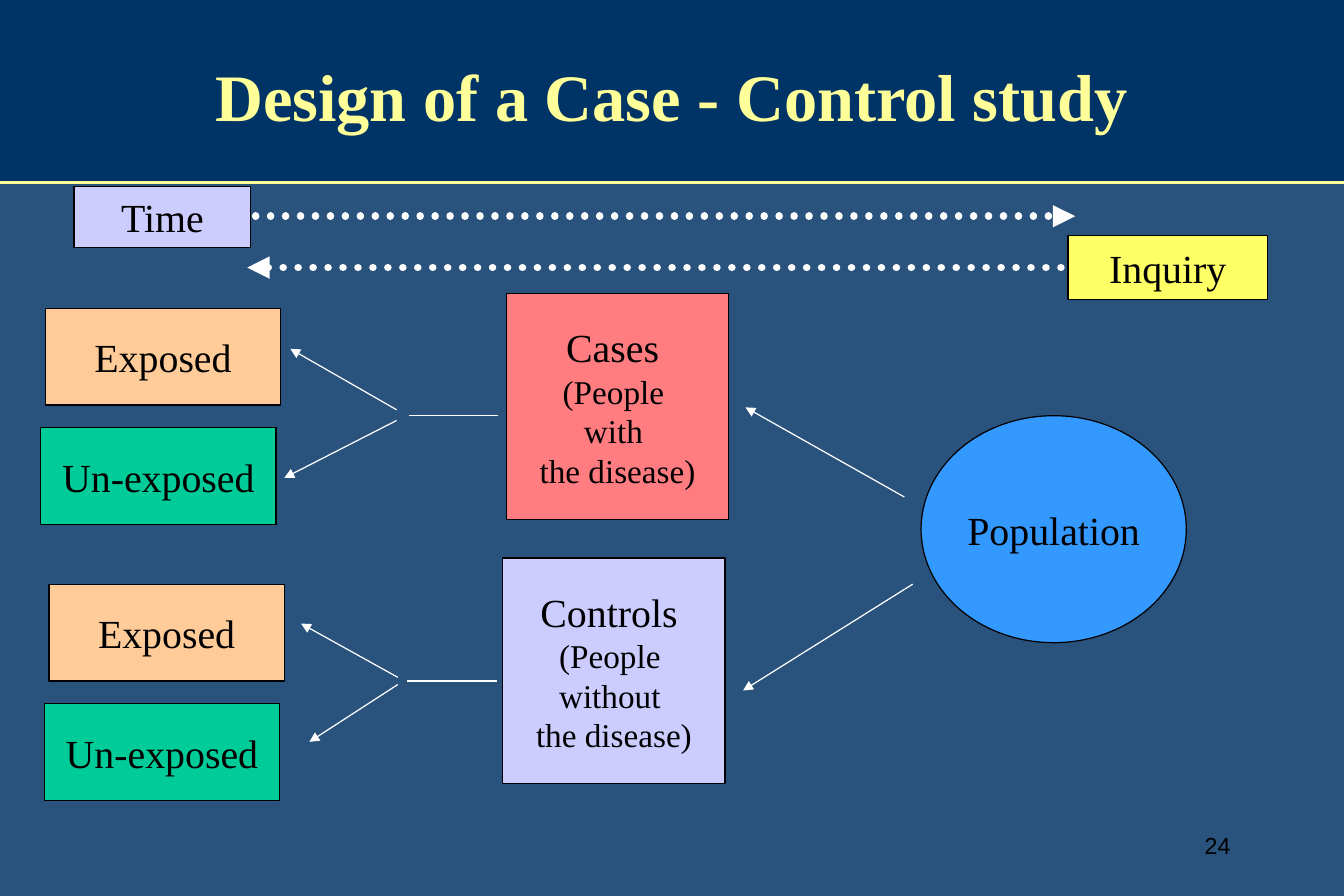
from lxml import etree
from pptx import Presentation
from pptx import util as u
from pptx.dml import color
from pptx.enum import dml, shapes, text
from pptx.oxml import ns

COLORS = {
    "background": "29537D", "band": "003366", "title": "FFFF99",
    "black": "000000", "white": "FFFFFF", "population": "3399FF",
    "cases": "FF7C80", "lavender": "CCCCFF", "exposed": "FFCC99",
    "unexposed": "00CC99", "inquiry": "FFFF66",
}
RGB = {name: color.RGBColor.from_string(value) for name, value in COLORS.items()}

presentation = Presentation()
presentation.slide_width = u.Inches(11.25)
presentation.slide_height = u.Inches(7.5)
COLUMN = presentation.slide_width / 45
ROW = presentation.slide_height / 30


def write(shape, content, sizes=(24,), font="Times New Roman", fill="black",
          bold=False, align=text.PP_ALIGN.CENTER, spacing=None, wrap=False):
    frame = shape.text_frame
    frame.text = content
    frame.word_wrap = wrap
    frame.auto_size = text.MSO_AUTO_SIZE.NONE
    frame.vertical_anchor = text.MSO_ANCHOR.MIDDLE
    for index, paragraph in enumerate(frame.paragraphs):
        paragraph.alignment = align
        paragraph.line_spacing = spacing
        for run in paragraph.runs:
            run.font.name = font
            run.font.size = u.Pt(sizes[min(index, len(sizes) - 1)])
            run.font.bold = bold
            run.font.color.rgb = RGB[fill]


def connect(start, end, width=0.75, stroke="white", arrow=None, dotted=False):
    connector = slide.shapes.add_connector(
        shapes.MSO_CONNECTOR.STRAIGHT,
        round(start[0] * COLUMN), round(start[1] * ROW),
        round(end[0] * COLUMN), round(end[1] * ROW))
    connector.line.color.rgb = RGB[stroke]
    connector.line.width = u.Pt(width)
    properties = connector.element.spPr
    outline = properties.get_or_add_ln()
    if dotted:
        connector.line.dash_style = dml.MSO_LINE.ROUND_DOT
        outline.set("cap", "rnd")
    if arrow:
        etree.SubElement(outline, ns.qn(f"a:{arrow}"), type="triangle")
    etree.SubElement(properties, ns.qn("a:effectLst"))


slide = presentation.slides.add_slide(presentation.slide_layouts[5])
slide.background.fill.solid()
slide.background.fill.fore_color.rgb = RGB["background"]

band = slide.shapes.add_shape(
    shapes.MSO_SHAPE.RECTANGLE, 0, 0, presentation.slide_width, round(6.12 * ROW))
band.shadow.inherit = False
band.fill.solid()
band.fill.fore_color.rgb = RGB["band"]
band.line.fill.background()

title = slide.shapes.title
title.element.addprevious(band.element)
title.left, title.top = round(3.36 * COLUMN), round(0.68 * ROW)
title.width, title.height = round(38.24 * COLUMN), round(5.44 * ROW)
write(title, "Design of a Case - Control study", sizes=(40,), fill="title",
      bold=True, spacing=0.85, wrap=True)
connect((0, 6.12), (45, 6.12), width=2, stroke="title")

page_number = slide.shapes.add_textbox(
    round(32.4 * COLUMN), round(27.28 * ROW), round(9.2 * COLUMN), round(2.04 * ROW))
write(page_number, "24", sizes=(14,), font="Arial", align=text.PP_ALIGN.RIGHT, wrap=True)

RECTANGLE = shapes.MSO_SHAPE.RECTANGLE
boxes = [
    (shapes.MSO_SHAPE.OVAL, "Population", "population", 30.84, 13.92, 8.88, 7.6),
    (RECTANGLE, "Time", "lavender", 2.48, 6.24, 5.92, 2.04),
    (RECTANGLE, "Inquiry", "inquiry", 35.76, 7.88, 6.68, 2.16),
]
study_groups = [
    ("Cases \n(People \nwith \nthe disease)", "cases", 16.96, 9.84, 1.52, 10.32),
    ("Controls \n(People \nwithout \nthe disease)", "lavender", 16.84, 18.68, 1.64, 19.56),
]
for label, fill, left, top, exposed_left, exposed_top in study_groups:
    boxes += [
        (RECTANGLE, label, fill, left, top, 7.44, 7.56),
        (RECTANGLE, "Exposed", "exposed", exposed_left, exposed_top, 7.88, 3.24),
        (RECTANGLE, "Un-exposed", "unexposed", exposed_left - 0.16, exposed_top + 4, 7.88, 3.24),
    ]

for kind, label, fill, left, top, width, height in boxes:
    box = slide.shapes.add_shape(
        kind, round(left * COLUMN), round(top * ROW),
        round(width * COLUMN), round(height * ROW))
    box.shadow.inherit = False
    box.fill.solid()
    box.fill.fore_color.rgb = RGB[fill]
    box.line.color.rgb = RGB["black"]
    box.line.width = u.Pt(0.75)
    write(box, label, sizes=(24, 20))

connect((8.56, 7.24), (36, 7.24), width=4.5, arrow="tailEnd", dotted=True)
connect((8.28, 8.96), (35.72, 8.96), width=4.5, arrow="headEnd", dotted=True)

branch_arrows = [
    ((30.28, 16.64), (24.96, 13.64)),
    ((30.56, 19.56), (24.88, 23.12)),
    ((13.28, 13.72), (9.72, 11.68)),
    ((13.28, 14.08), (9.52, 16)),
    ((13.32, 22.68), (10.08, 20.88)),
    ((13.32, 22.92), (10.36, 24.84)),
]
for start, end in branch_arrows:
    connect(start, end, arrow="tailEnd")

for right, level in [(16.68, 13.92), (16.64, 22.8)]:
    connect((right, level), (right - 3, level))

presentation.save("out.pptx")
